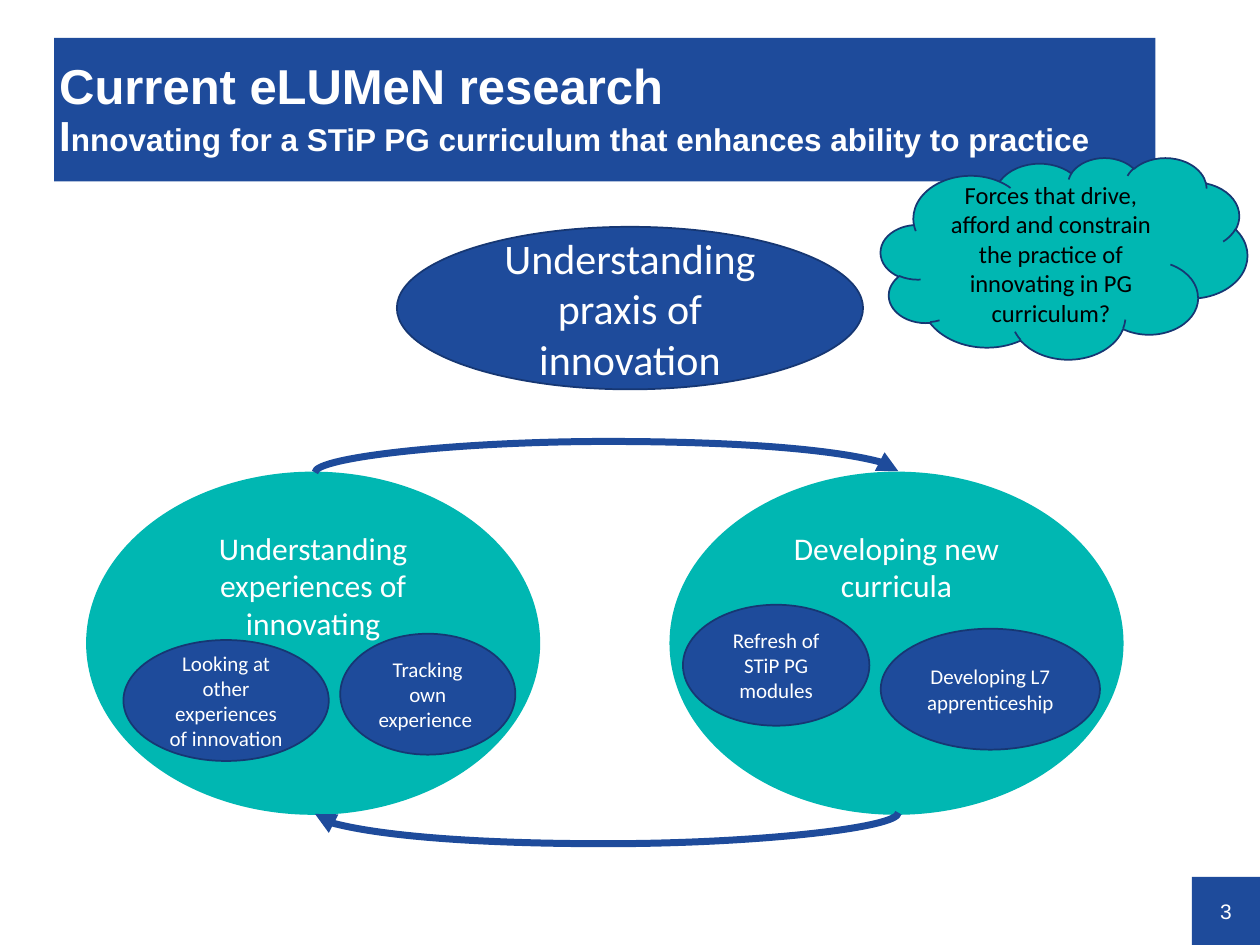
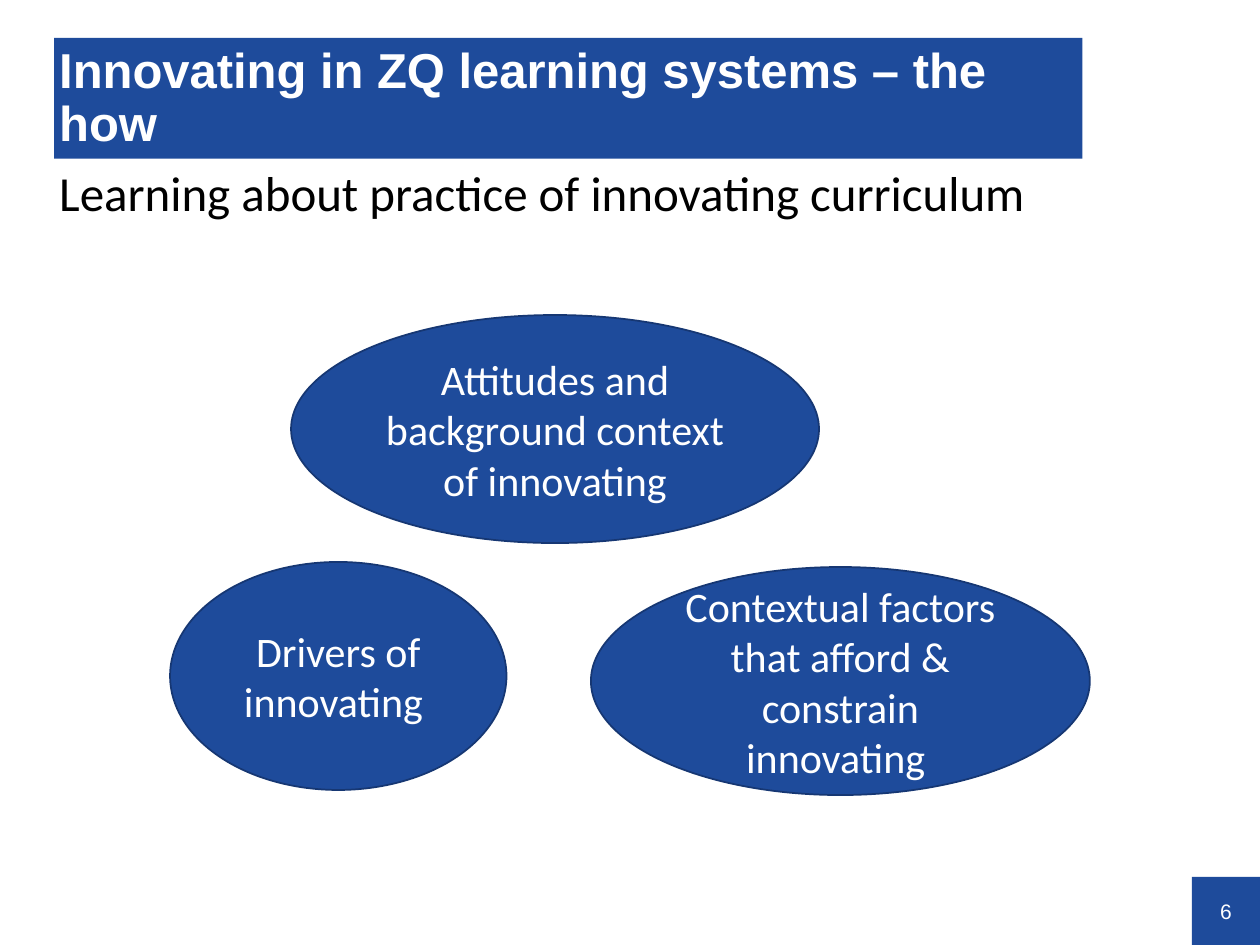
from lxml import etree
from pptx import Presentation
from pptx.dml.color import RGBColor
from pptx.enum.shapes import MSO_CONNECTOR, MSO_SHAPE
from pptx.enum.text import MSO_ANCHOR, MSO_AUTO_SIZE, PP_ALIGN
from pptx.oxml.ns import qn
from pptx.util import Inches, Pt

# Colours
BLUE = RGBColor(0x1E, 0x4B, 0x9B)
DARK_BLUE = RGBColor(0x16, 0x37, 0x73)
TEAL = RGBColor(0x00, 0xB7, 0xB2)
WHITE = RGBColor(0xFF, 0xFF, 0xFF)
BLACK = RGBColor(0x00, 0x00, 0x00)

# Grid: 100 columns by 75 rows of a tenth of an inch
COLUMNS, ROWS = 100, 75
MARGIN = 4.3
TITLE_TOP = 3
PAGE_BOX = (94.6, 69.6, 5.4, 5.4)

# Text formats
HEADING = {"name": "Arial", "size": Pt(28), "bold": True}
PAGE_NUMBER = {"name": "Arial", "size": Pt(12)}
BODY = {"name": "Calibri", "size": Pt(28)}


def cell(count):
    """Length of a number of grid cells."""
    return Inches(round(count / 10, 2))


def apply(target, values):
    for name, value in values.items():
        setattr(target, name, value)


class Deck:
    """Holds the style and the current slide."""

    def __init__(self):
        self.presentation = Presentation()
        self.presentation.slide_width = cell(COLUMNS)
        self.presentation.slide_height = cell(ROWS)
        self.slide = None

    def new_slide(self, layout_index, number):
        layout = self.presentation.slide_layouts[layout_index]
        self.slide = self.presentation.slides.add_slide(layout)
        page = self.shape(PAGE_BOX, str(number), PAGE_NUMBER, kind=MSO_SHAPE.RECTANGLE, line=None)
        self.insets(page.text_frame, 0, 0, 0, 0)

    def place(self, shape, box):
        apply(shape, dict(zip(("left", "top", "width", "height"), map(cell, box))))

    def insets(self, frame, left, top, right, bottom):
        sides = ("margin_left", "margin_top", "margin_right", "margin_bottom")
        apply(frame, dict(zip(sides, map(Inches, (left, top, right, bottom)))))

    def run(self, paragraph, text, style, color):
        run = paragraph.add_run()
        run.text = text
        apply(run.font, style)
        run.font.color.rgb = color

    def placeholder(self, shape, box, anchor, space_before=0):
        """Moves a placeholder and returns its left-aligned paragraph."""
        self.place(shape, box)
        frame = shape.text_frame
        apply(frame, {"word_wrap": True, "auto_size": MSO_AUTO_SIZE.NONE,
                      "vertical_anchor": anchor})
        paragraph = frame.paragraphs[0]
        apply(paragraph, {"alignment": PP_ALIGN.LEFT, "line_spacing": 0.9,
                          "space_before": Pt(space_before)})
        return paragraph

    def title(self, width, height, text, subtitle_runs=()):
        shape = self.slide.shapes.title
        shape.fill.solid()
        shape.fill.fore_color.rgb = BLUE
        box = (MARGIN, TITLE_TOP, width, height)
        paragraph = self.placeholder(shape, box, MSO_ANCHOR.MIDDLE)
        self.insets(shape.text_frame, 0.04, 0.02, 0, 0)
        self.run(paragraph, text, HEADING, WHITE)
        if subtitle_runs:
            paragraph.add_line_break()
        for subtitle, size in subtitle_runs:
            self.run(paragraph, subtitle, HEADING | {"size": Pt(size)}, WHITE)

    def body(self, box, text):
        shape = self.slide.placeholders[1]
        paragraph = self.placeholder(shape, box, MSO_ANCHOR.TOP, space_before=10)
        self.insets(shape.text_frame, 0.04, 0.04, 0.04, 0.04)
        properties = paragraph._p.get_or_add_pPr()
        properties.set("marL", "0")
        properties.set("indent", "0")
        etree.SubElement(properties, qn("a:buNone"))
        self.run(paragraph, text, BODY, BLACK)

    def shape(self, box, text, style, kind=MSO_SHAPE.OVAL, fill=BLUE, line=DARK_BLUE,
              color=WHITE, anchor=MSO_ANCHOR.MIDDLE):
        shape = self.slide.shapes.add_shape(kind, *map(cell, box))
        shape.shadow.inherit = False
        shape.fill.solid()
        shape.fill.fore_color.rgb = fill
        if line is None:
            shape.line.fill.background()
        else:
            shape.line.color.rgb = line
            shape.line.width = Pt(1)
        apply(shape.text_frame, {"word_wrap": True, "vertical_anchor": anchor})
        paragraph = shape.text_frame.paragraphs[0]
        paragraph.alignment = PP_ALIGN.CENTER
        self.run(paragraph, text, style, color)
        return shape

    def bubble(self, box, text, size, **options):
        return self.shape(box, text, {"name": "Calibri", "size": Pt(size)}, **options)

    def curved_arrow(self, box, bulge, flipped=False):
        """Arc on its side; bulge is its depth in multiples of the box width."""
        connector = self.slide.shapes.add_connector(MSO_CONNECTOR.CURVE, 0, 0, 0, 0)
        self.place(connector, box)
        connector.line.color.rgb = BLUE
        connector.line.width = Pt(4)
        properties = connector._element.spPr
        transform = properties.find(qn("a:xfrm"))
        transform.set("rot", str(90 * 60000))
        if flipped:
            transform.set("flipH", "1")
            transform.set("flipV", "1")
        adjustments = properties.find(qn("a:prstGeom")).get_or_add_avLst()
        etree.SubElement(adjustments, qn("a:gd"), name="adj1", fmla=f"val {bulge * 100000}")
        etree.SubElement(properties.find(qn("a:ln")), qn("a:tailEnd"), type="triangle")
        etree.SubElement(properties, qn("a:effectLst"))


def research_slide(deck):
    deck.new_slide(5, 3)
    deck.title(87.4, 11.4, "Current eLUMeN research", [
        ("I", 24),
        ("nnovating for a STiP PG curriculum that enhances ability to practice", 18)])

    # Two activity areas
    areas = ("Understanding experiences of innovating", "Developing new curricula")
    for index, text in enumerate(areas):
        deck.bubble((6.9 + 46.3 * index, 37.5, 35.9, 27.1), text, 18,
                    fill=TEAL, line=TEAL, anchor=MSO_ANCHOR.TOP)

    # Overall aim
    deck.bubble((31.5, 18, 37, 12.9), "Understanding praxis of innovation", 24)

    # Activities: left, top, width, text
    activities = [
        (27, 50.3, 13.9, "Tracking own experience "),
        (9.8, 50.8, 16.3, "Looking at other experiences of innovation"),
        (69.9, 49.9, 17.4, "Developing L7 apprenticeship"),
        (54.2, 48, 14.8, "Refresh of STiP PG modules"),
    ]
    for left, top, width, text in activities:
        deck.bubble((left, top, width, 9.6), text, 12)

    # Cycle between the areas
    deck.curved_arrow((48.1, 14.3, 0.1, 46.3), 25, flipped=True)
    deck.curved_arrow((48.1, 41.4, 0.1, 46.3), 25)

    # Question
    deck.bubble((69.9, 12.5, 29.1, 16),
                "Forces that drive, afford and constrain the practice of innovating"
                " in PG curriculum?", 14, kind=MSO_SHAPE.CLOUD, fill=TEAL, color=BLACK)


def learning_slide(deck):
    deck.new_slide(1, 6)
    deck.title(81.6, 9.6, "Innovating in ZQ learning systems – the how")
    deck.body((MARGIN, 13, 99.1, 55.9), "Learning about practice of innovating curriculum")

    # Themes: left, top, width, text
    themes = [
        (46.9, 45, 39.6, "Contextual factors that afford & constrain innovating "),
        (13.5, 44.6, 26.7, "Drivers of innovating "),
        (23.1, 25, 41.9, "Attitudes and background context of innovating"),
    ]
    for left, top, width, text in themes:
        deck.bubble((left, top, width, 18.1), text, 24)


def main():
    deck = Deck()
    research_slide(deck)
    learning_slide(deck)
    deck.presentation.save("out.pptx")


if __name__ == "__main__":
    main()
